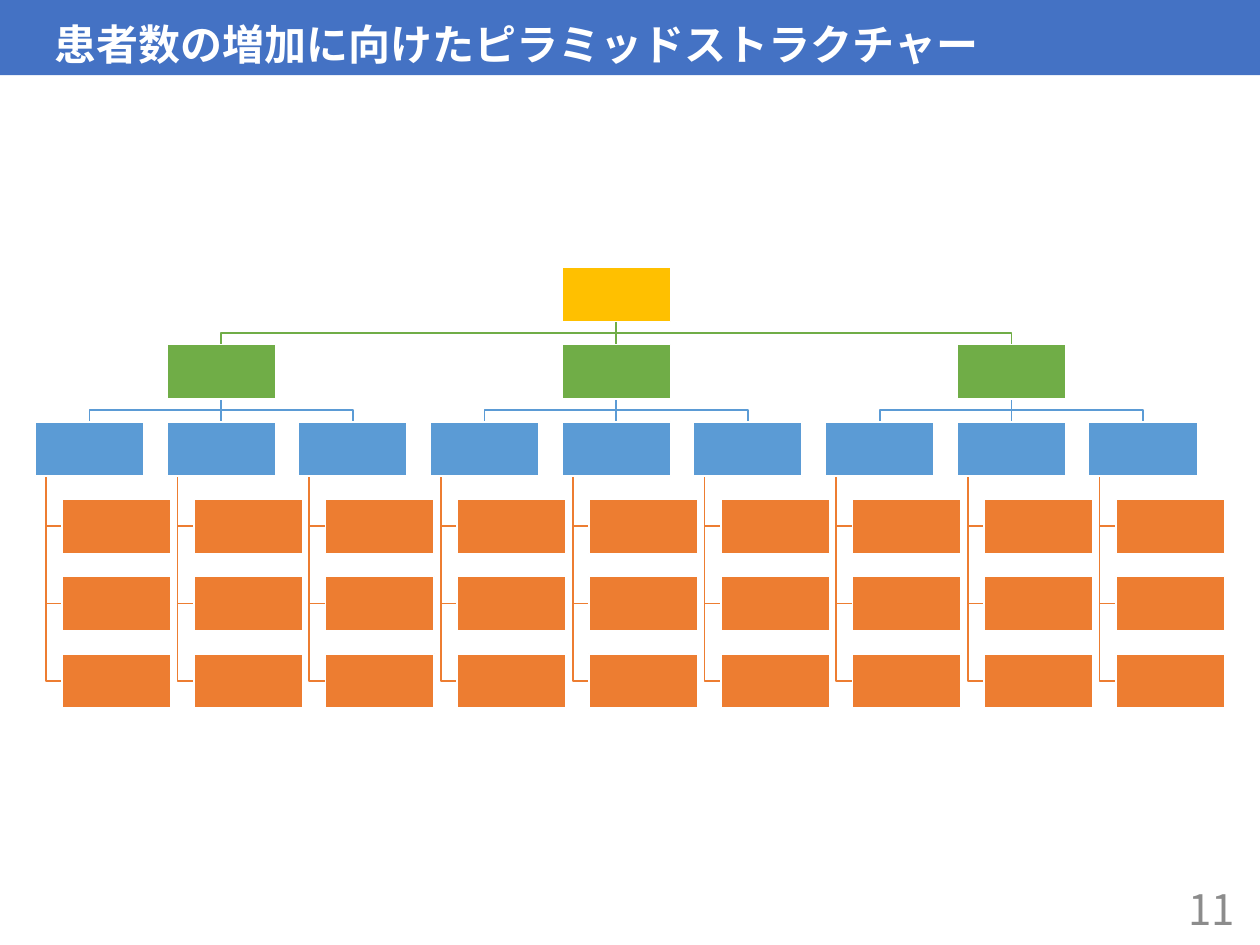
from pptx import Presentation
from pptx import util as u
from pptx.dml.color import RGBColor
from pptx.enum import shapes, text
from pptx.oxml.ns import qn
from lxml import etree

FONT = "Noto Sans CJK JP"
WHITE, BLUE, GRAY = "FFFFFF", "4472C4", "8C8C8C"
YELLOW, GREEN, SKY, ORANGE = "FFC000", "70AD47", "5B9BD5", "ED7D31"

# Tree grid, in points: every gap follows from the box width
BOX_W = 62.2
BOX_H = BOX_W / 2
GAP = BOX_W * 0.21
COL_STEP = BOX_W + GAP
ROW_STEP = BOX_H + GAP
TREE_LEFT, TREE_TOP = 20, 152.7
STEM_INSET = BOX_W / 10
LEAF_INDENT = BOX_W / 4


def color(hex_code):
    return RGBColor.from_string(hex_code)


def column_x(column):
    return TREE_LEFT + column * COL_STEP


def row_y(row):
    return TREE_TOP + row * ROW_STEP


def add_box(parent, x, y, width, height, fill, outline=None):
    box = parent.add_shape(shapes.MSO_SHAPE.RECTANGLE,
                           u.Pt(x), u.Pt(y), u.Pt(width), u.Pt(height))
    box.shadow.inherit = False
    box.fill.solid()
    box.fill.fore_color.rgb = color(fill)
    if outline:
        box.line.color.rgb = color(outline)
        box.line.width = u.Pt(1)
    else:
        box.line.fill.background()
    return box


def add_link(parent, points, hex_code):
    """Draw a bent link, or a connector when it is a single segment."""
    corners = [(u.Pt(x), u.Pt(y)) for x, y in points]
    if len(corners) == 2:
        link = parent.add_connector(shapes.MSO_CONNECTOR.STRAIGHT,
                                    *corners[0], *corners[1])
        etree.SubElement(link._element.spPr, qn("a:effectLst"))
    else:
        outline = parent.build_freeform(*corners[0])
        outline.add_line_segments(corners[1:], close=False)
        link = outline.convert_to_shape()
        link.fill.background()
        link.shadow.inherit = False
    link.line.color.rgb = color(hex_code)
    link.line.width = u.Pt(1)


def add_words(shape, words, hex_code, align, anchor, bold=False):
    frame = shape.text_frame
    frame.word_wrap = True
    frame.vertical_anchor = anchor
    paragraph = frame.paragraphs[0]
    paragraph.alignment = align
    run = paragraph.add_run()
    run.text = words
    run.font.size = u.Pt(24)
    run.font.bold = bold
    run.font.name = FONT
    run.font.color.rgb = color(hex_code)
    etree.SubElement(run._r.get_or_add_rPr(), qn("a:ea"), typeface=FONT)
    return paragraph


def add_branch_link(parent, from_column, to_column, row, hex_code):
    start_x, end_x = (column_x(c) + BOX_W / 2 for c in (from_column, to_column))
    top, bottom = row_y(row) + BOX_H, row_y(row + 1)
    middle = (top + bottom) / 2
    points = [(start_x, top), (end_x, bottom)]
    if from_column != to_column:
        points[1:1] = [(start_x, middle), (end_x, middle)]
    add_link(parent, points, hex_code)


def add_leaf_link(parent, column, row):
    stem_x = column_x(column) + STEM_INSET
    leaf_y = row_y(row) + BOX_H / 2
    add_link(parent, [(stem_x, row_y(2) + BOX_H), (stem_x, leaf_y),
                      (column_x(column) + LEAF_INDENT, leaf_y)], ORANGE)


def add_node(parent, column, row, fill, indent=0):
    add_box(parent, column_x(column) + indent, row_y(row),
            BOX_W, BOX_H, fill, WHITE)


def add_tree(parent):
    root, branches, leaf_rows = 4, (1, 4, 7), (3, 4, 5)
    # Links lie behind the boxes
    for branch in branches:
        add_branch_link(parent, root, branch, 0, GREEN)
        for column in range(branch - 1, branch + 2):
            add_branch_link(parent, branch, column, 1, SKY)
            for row in leaf_rows:
                add_leaf_link(parent, column, row)
    # Boxes, level by level
    add_node(parent, root, 0, YELLOW)
    for branch in branches:
        add_node(parent, branch, 1, GREEN)
        for column in range(branch - 1, branch + 2):
            add_node(parent, column, 2, SKY)
            for row in leaf_rows:
                add_node(parent, column, row, ORANGE, LEAF_INDENT)


def main():
    deck = Presentation()
    deck.slide_width, deck.slide_height = u.Pt(720), u.Pt(540)
    slide = deck.slides.add_slide(deck.slide_layouts[6])

    # Title bar, indented by one character
    title = add_box(slide.shapes, 0, 0, 720, 43, BLUE)
    heading = add_words(title, "患者数の増加に向けたピラミッドストラクチャー", WHITE,
                        text.PP_ALIGN.LEFT, text.MSO_ANCHOR.BOTTOM, bold=True)
    heading.line_spacing = 0.9
    title.text_frame.margin_left = u.Pt(31.2)

    # Page number
    page_number = slide.shapes.add_textbox(u.Pt(550.8), u.Pt(504.7),
                                           u.Pt(162), u.Pt(28.8))
    add_words(page_number, "11", GRAY,
              text.PP_ALIGN.RIGHT, text.MSO_ANCHOR.MIDDLE)

    # Pyramid structure
    add_tree(slide.shapes.add_group_shape().shapes)

    deck.save("out.pptx")


if __name__ == "__main__":
    main()
